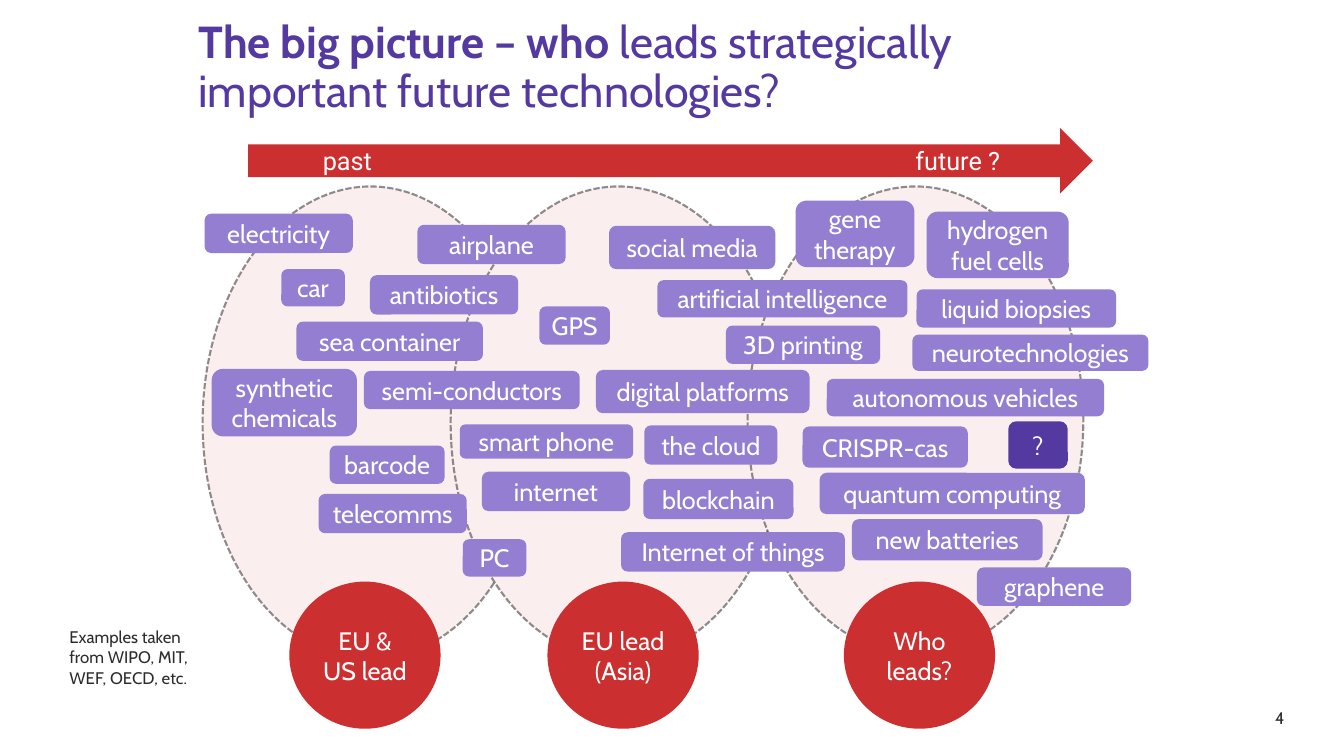
from dataclasses import dataclass
from pptx import Presentation
from pptx.dml.color import RGBColor
from pptx.enum.dml import MSO_LINE
from pptx.enum.shapes import MSO_SHAPE
from pptx.enum.text import MSO_ANCHOR, PP_ALIGN
from pptx.oxml.ns import qn
from pptx.util import Inches, Pt
from lxml.etree import SubElement


@dataclass(frozen=True)
class Theme:
    """Colours, type sizes and faces of the deck."""
    ink: str = "2C2C2C"
    white: str = "FFFFFF"
    red: str = "CC2F2F"
    blush: str = "FBEEEE"
    lilac: str = "937ED1"
    violet: str = "5439A1"
    face: str = "Cabin"
    alt: str = "Roboto"
    title: int = 32
    label: int = 18
    note: int = 12


@dataclass(frozen=True)
class Box:
    """A region in columns and rows, ten of each to the inch."""
    x: float
    y: float
    w: float
    h: float

    def sub(self, x, y, w, h):
        """Return a region placed relative to this one."""
        return Box(self.x + x, self.y + y, w, h)

    def emu(self):
        """Return left, top, width and height as lengths."""
        return [Inches(n / 10) for n in (self.x, self.y, self.w, self.h)]


THEME = Theme()

ERAS = [
    ("EU & US lead", 16.75, 6.5, 46.9, 16.2),
    ("EU lead (Asia)", 41.35, 6.5, 46.9, 41.8),
    ("Who leads?", 70.8, 6.5, 46.4, 71.2),
]

CHIPS = [
    ("electricity", 0.3, 9.2, 14.7, 3.9),
    ("car", 7.9, 14.7, 6.3, 3.7),
    ("antibiotics", 16.7, 15.3, 14.7, 3.9),
    ("sea container", 9.4, 19.9, 18.5, 3.9),
    ("synthetic chemicals", 1, 24.6, 14.4, 6.7),
    ("barcode", 12.7, 32.2, 11.4, 3.8),
    ("telecomms", 11.6, 37, 14.7, 3.9),
    ("PC", 25.9, 41.5, 6.3, 3.7),
    ("smart phone", 25.6, 30.1, 17.2, 3.4),
    ("semi-conductors", 16.1, 24.8, 21.4, 3.8),
    ("internet", 27.8, 34.8, 14.7, 3.9),
    ("GPS", 33.5, 18.4, 7, 3.8),
    ("airplane", 21.4, 10.3, 14.7, 3.9),
    ("social media", 40.4, 10.4, 16.5, 4.3),
    ("artificial intelligence", 45.2, 15.8, 24.8, 3.7),
    ("gene therapy", 58.9, 7.9, 11.8, 6.6),
    ("hydrogen fuel cells", 71.9, 9, 14.1, 6.6),
    ("liquid biopsies", 70.9, 16.7, 19.8, 3.8),
    ("neurotechnologies", 70.5, 21.2, 23.4, 3.6),
    ("autonomous vehicles", 62, 25.6, 27.5, 3.7),
    ("CRISPR-cas", 59.6, 30.3, 16.4, 4.1),
    ("digital platforms", 39.1, 24.7, 21.2, 4.3),
    ("blockchain", 43.8, 35.5, 14.9, 4),
    ("Internet of things", 41.6, 40.8, 22.2, 3.9),
    ("the cloud", 43.9, 30.2, 13.2, 3.9),
    ("3D printing", 52, 20.3, 15.3, 3.8),
    ("quantum computing", 61.3, 34.9, 26.3, 4.1),
    ("graphene", 76.9, 44.3, 15.3, 3.8),
    ("new batteries", 64.5, 39.5, 18.9, 4.1),
    ("?", 80, 29.8, 5.9, 4.7),
]


def write(shape, runs, size, tint, face=THEME.face, centre=False, lead=None):
    """Fill a shape with one paragraph of (text, bold) runs."""
    frame = shape.text_frame
    frame.word_wrap = True
    frame.vertical_anchor = MSO_ANCHOR.MIDDLE if centre else MSO_ANCHOR.TOP
    para = frame.paragraphs[0]
    para.alignment = PP_ALIGN.CENTER if centre else PP_ALIGN.LEFT
    if lead:
        para.line_spacing = lead
    for text, bold in runs:
        run = para.add_run()
        run.text = text
        look = {"size": Pt(size), "name": face, "bold": bold}
        for key, value in look.items():
            setattr(run.font, key, value)
        run.font.color.rgb = RGBColor.from_string(tint)


def label(slide, box, runs, size, tint, **look):
    """Add a text box."""
    write(slide.shapes.add_textbox(*box.emu()), runs, size, tint, **look)


def solid(slide, kind, box, fill, text=None):
    """Add a plain filled shape, with white text if any is given."""
    shape = slide.shapes.add_shape(kind, *box.emu())
    shape.shadow.inherit = False
    shape.fill.solid()
    shape.fill.fore_color.rgb = RGBColor.from_string(fill)
    shape.line.fill.background()
    if text:
        write(shape, [(text, False)], THEME.label, THEME.white, centre=True)
    return shape


def dash(shape):
    """Give a shape a translucent dashed outline."""
    line = shape.line
    line.color.rgb = RGBColor.from_string(THEME.ink)
    line.width = Pt(1.5)
    line.dash_style = MSO_LINE.SQUARE_DOT
    tint = shape.element.spPr.find(qn("a:ln")).find(".//" + qn("a:srgbClr"))
    SubElement(tint, qn("a:alpha"), val="53000")


def header(slide, box):
    """Write the two-line title."""
    runs = [("The big picture – who", True),
            (" leads strategically important future technologies?", False)]
    label(slide, box, runs, THEME.title, THEME.violet, lead=0.9)


def timeline(slide, box):
    """Draw the arrow from past to future."""
    solid(slide, MSO_SHAPE.RIGHT_ARROW, box, THEME.red)
    for text, mid in (("past", 9.85), ("future ?", 70.4)):
        label(slide, box.sub(mid - 7, 0, 14, box.h), [(text, False)],
              THEME.label, THEME.white, face=THEME.alt, centre=True)


def ovals(slide, box):
    """Draw the dashed oval of each era."""
    for _, mid, top, high, _ in ERAS:
        dash(solid(slide, MSO_SHAPE.OVAL,
                   box.sub(mid - 16.65, top, 33.3, high), THEME.blush))


def chips(slide, box):
    """Scatter the technologies over the eras."""
    for text, *place in CHIPS:
        fill = THEME.violet if text == "?" else THEME.lilac
        solid(slide, MSO_SHAPE.ROUNDED_RECTANGLE, box.sub(*place), fill, text)


def leaders(slide, box):
    """Draw the circle that names the leader of each era."""
    for text, *_, mid in ERAS:
        solid(slide, MSO_SHAPE.OVAL, box.sub(mid - 7.5, 45.7, 15, 14.6),
              THEME.red, text)


def footer(slide, box):
    """Write the source note and the page number."""
    note = "Examples taken from WIPO, MIT, WEF, OECD, etc."
    for text, place in ((note, (0, 0, 15.2, 7.1)), ("4", (119.6, 8, 7, 4))):
        label(slide, box.sub(*place), [(text, False)], THEME.note, THEME.ink)


def main():
    """Build the deck."""
    deck = Presentation()
    deck.slide_width, deck.slide_height = Inches(13.33), Inches(7.5)
    slide = deck.slides.add_slide(deck.slide_layouts[6])
    stage = Box(20, 12, 94, 61)
    footer(slide, Box(5.9, 61.7, 126.6, 12))
    header(slide, Box(18.7, 1.5, 86.9, 11.1))
    timeline(slide, stage.sub(4.6, 0.7, 83.8, 6.5))
    for draw in (ovals, chips, leaders):
        draw(slide, stage)
    deck.save("out.pptx")


if __name__ == "__main__":
    main()
